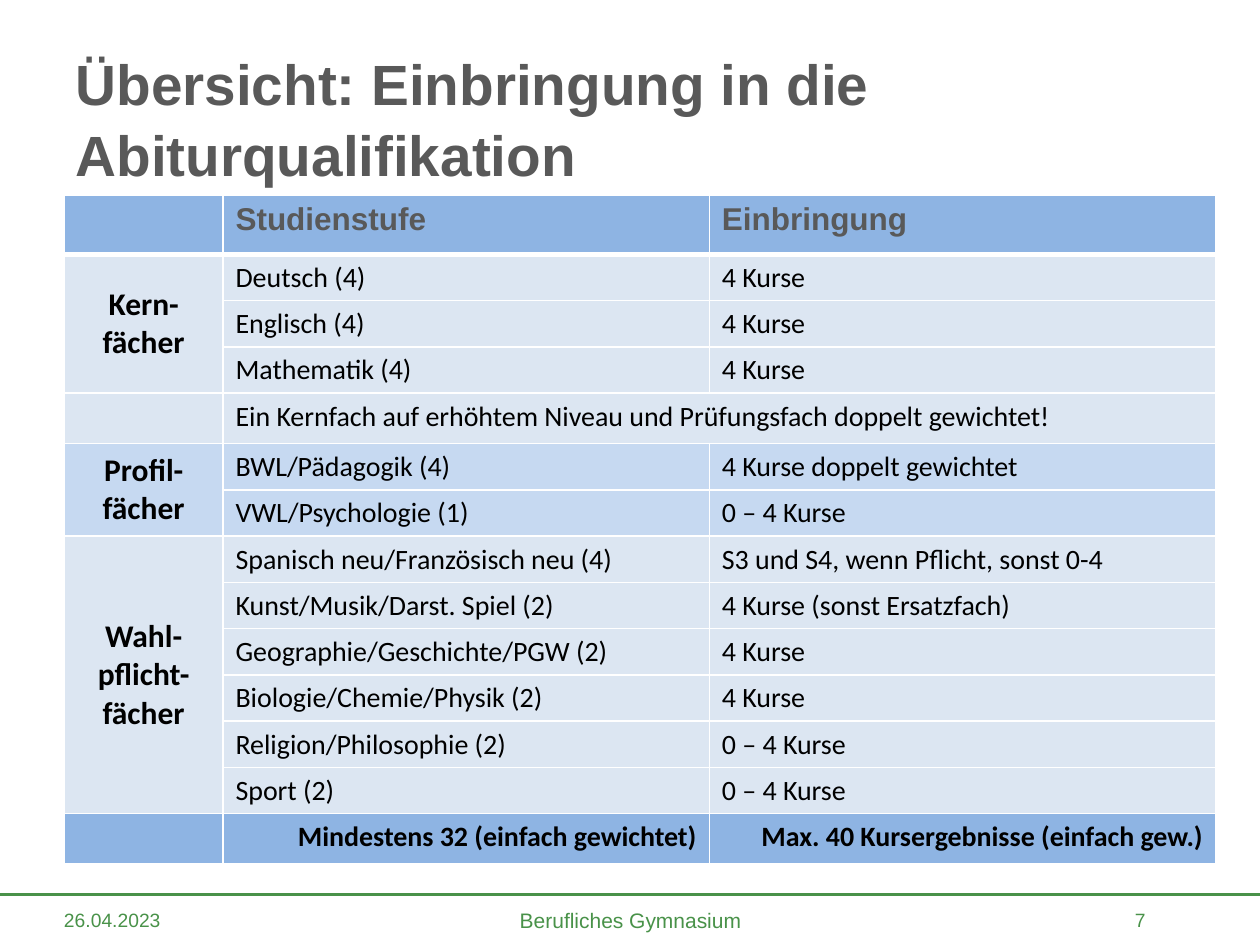
from typing import NamedTuple

from lxml import etree
from pptx import Presentation
from pptx.dml.color import RGBColor
from pptx.enum.shapes import MSO_CONNECTOR
from pptx.enum.text import MSO_ANCHOR, MSO_AUTO_SIZE, PP_ALIGN
from pptx.oxml.ns import qn
from pptx.util import Inches, Pt

LEFT, CENTER, RIGHT = PP_ALIGN.LEFT, PP_ALIGN.CENTER, PP_ALIGN.RIGHT
MIDDLE = MSO_ANCHOR.MIDDLE
GREEN, GREY, BLACK, WHITE = "499249", "595959", "000000", "FFFFFF"
DARK_BLUE, MID_BLUE, PALE_BLUE = "8EB4E3", "C6D9F1", "DCE6F2"


class Footer(NamedTuple):
    text: str
    left: float
    width: float
    size: float
    align: PP_ALIGN


class Group(NamedTuple):
    label: str
    fill: str
    rows: list


FOOTERS = [
    Footer("26.04.2023", 0.41, 2.33, 11, LEFT),
    Footer("Berufliches Gymnasium", 3.42, 3.17, 12, CENTER),
    Footer("7", 8.66, 0.78, 11, CENTER),
]

HEADER = ("Studienstufe", "Einbringung")
TOTALS = ("Mindestens 32 (einfach gewichtet)", "Max. 40 Kursergebnisse (einfach gew.)")
GROUPS = [
    Group("Kern-fächer", PALE_BLUE, [
        ("Deutsch (4)", "4 Kurse"),
        ("Englisch (4)", "4 Kurse"),
        ("Mathematik (4)", "4 Kurse"),
    ]),
    # A single text spans both course columns
    Group("", PALE_BLUE, [
        ("Ein Kernfach auf erhöhtem Niveau und Prüfungsfach doppelt gewichtet!",),
    ]),
    Group("Profil-fächer", MID_BLUE, [
        ("BWL/Pädagogik (4)", "4 Kurse doppelt gewichtet"),
        ("VWL/Psychologie (1)", "0 – 4 Kurse"),
    ]),
    Group("Wahl-pflicht-fächer", PALE_BLUE, [
        ("Spanisch neu/Französisch neu (4)", "S3 und S4, wenn Pflicht, sonst 0-4"),
        ("Kunst/Musik/Darst. Spiel (2)", "4 Kurse (sonst Ersatzfach)"),
        ("Geographie/Geschichte/PGW (2)", "4 Kurse"),
        ("Biologie/Chemie/Physik (2)", "4 Kurse"),
        ("Religion/Philosophie (2)", "0 – 4 Kurse"),
        ("Sport (2)", "0 – 4 Kurse"),
    ]),
]
COLUMN_WIDTHS = (1.26, 3.86, 4.02)
HEADER_HEIGHT, ROW_HEIGHT = 0.47, 0.34


def rgb(color: str) -> RGBColor:
    return RGBColor.from_string(color)


def write(tf, text: str, size: float, font: str, color: str,
          bold: bool = False, align: PP_ALIGN = LEFT) -> None:
    p = tf.paragraphs[0]
    p.alignment = align
    r = p.add_run()
    r.text = text
    r.font.size = Pt(size)
    r.font.name = font
    r.font.bold = bold
    r.font.color.rgb = rgb(color)


def style_cell(cell, fill: str, bottom: float = 1) -> None:
    """Fill a cell and give it white borders."""
    cell.fill.solid()
    cell.fill.fore_color.rgb = rgb(fill)
    tc_pr = cell._tc.get_or_add_tcPr()
    for i, (side, width) in enumerate(zip("LRTB", (1, 1, 1, bottom))):
        ln = etree.Element(qn(f"a:ln{side}"), w=str(Pt(width)))
        solid = etree.SubElement(ln, qn("a:solidFill"))
        etree.SubElement(solid, qn("a:srgbClr"), val=WHITE)
        tc_pr.insert(i, ln)


def add_footer(s, footer: Footer) -> None:
    box = s.shapes.add_textbox(Inches(footer.left), Inches(7.1),
                               Inches(footer.width), Inches(0.4))
    tf = box.text_frame
    tf.word_wrap = True
    tf.vertical_anchor = MIDDLE
    write(tf, footer.text, footer.size, "Arial", GREEN, align=footer.align)


def add_course_table(s) -> None:
    row_count = sum(len(g.rows) for g in GROUPS) + 2
    height = HEADER_HEIGHT + (row_count - 1) * ROW_HEIGHT
    table = s.shapes.add_table(row_count, 3, Inches(0.51), Inches(1.55),
                               Inches(sum(COLUMN_WIDTHS)), Inches(height)).table
    table.first_row = table.horz_banding = False
    for column, width in zip(table.columns, COLUMN_WIDTHS):
        column.width = Inches(width)
    for row in table.rows:
        row.height = Inches(ROW_HEIGHT)
    table.rows[0].height = Inches(HEADER_HEIGHT)

    # Header and totals
    last = row_count - 1
    for c in range(3):
        style_cell(table.cell(0, c), DARK_BLUE, bottom=3)
        style_cell(table.cell(last, c), DARK_BLUE)
    for c, (heading, total) in enumerate(zip(HEADER, TOTALS), 1):
        write(table.cell(0, c).text_frame, heading, 18, "Arial", GREY, True)
        write(table.cell(last, c).text_frame, total, 16, "Calibri", BLACK, True, RIGHT)

    # Subject groups
    top = 1
    for group in GROUPS:
        for r, texts in enumerate(group.rows, top):
            for c in range(3):
                style_cell(table.cell(r, c), group.fill)
            for c, text in enumerate(texts, 1):
                write(table.cell(r, c).text_frame, text, 16, "Calibri", BLACK)
            if len(texts) == 1:
                table.cell(r, 1).merge(table.cell(r, 2))
        bottom = top + len(group.rows) - 1
        label = table.cell(top, 0)
        if bottom > top:
            label.merge(table.cell(bottom, 0))
        if group.label:
            label.vertical_anchor = MIDDLE
            write(label.text_frame, group.label, 18, "Calibri", BLACK, True, CENTER)
        top = bottom + 1


def main() -> None:
    prs = Presentation()
    prs.slide_width, prs.slide_height = Inches(10), Inches(7.5)
    s = prs.slides.add_slide(prs.slide_layouts[5])

    # Footer rule and texts
    rule = s.shapes.add_connector(MSO_CONNECTOR.STRAIGHT, Inches(-0.47), Inches(7.1),
                                  Inches(10.23), Inches(7.1))
    rule.line.color.rgb = rgb(GREEN)
    rule.line.width = Pt(1.5)
    etree.SubElement(rule._element.spPr, qn("a:effectLst"))
    for footer in FOOTERS:
        add_footer(s, footer)

    # Title
    title = s.shapes.title
    title.left, title.top = Inches(0.5), Inches(0.3)
    title.width, title.height = Inches(9), Inches(1.25)
    tf = title.text_frame
    tf.auto_size = MSO_AUTO_SIZE.NONE
    tf.vertical_anchor = MIDDLE
    write(tf, "Übersicht: Einbringung in die Abiturqualifikation",
          32.4, "Arial", GREY, True)
    tf.paragraphs[0].line_spacing = 1.05

    add_course_table(s)
    prs.save("out.pptx")


if __name__ == "__main__":
    main()
